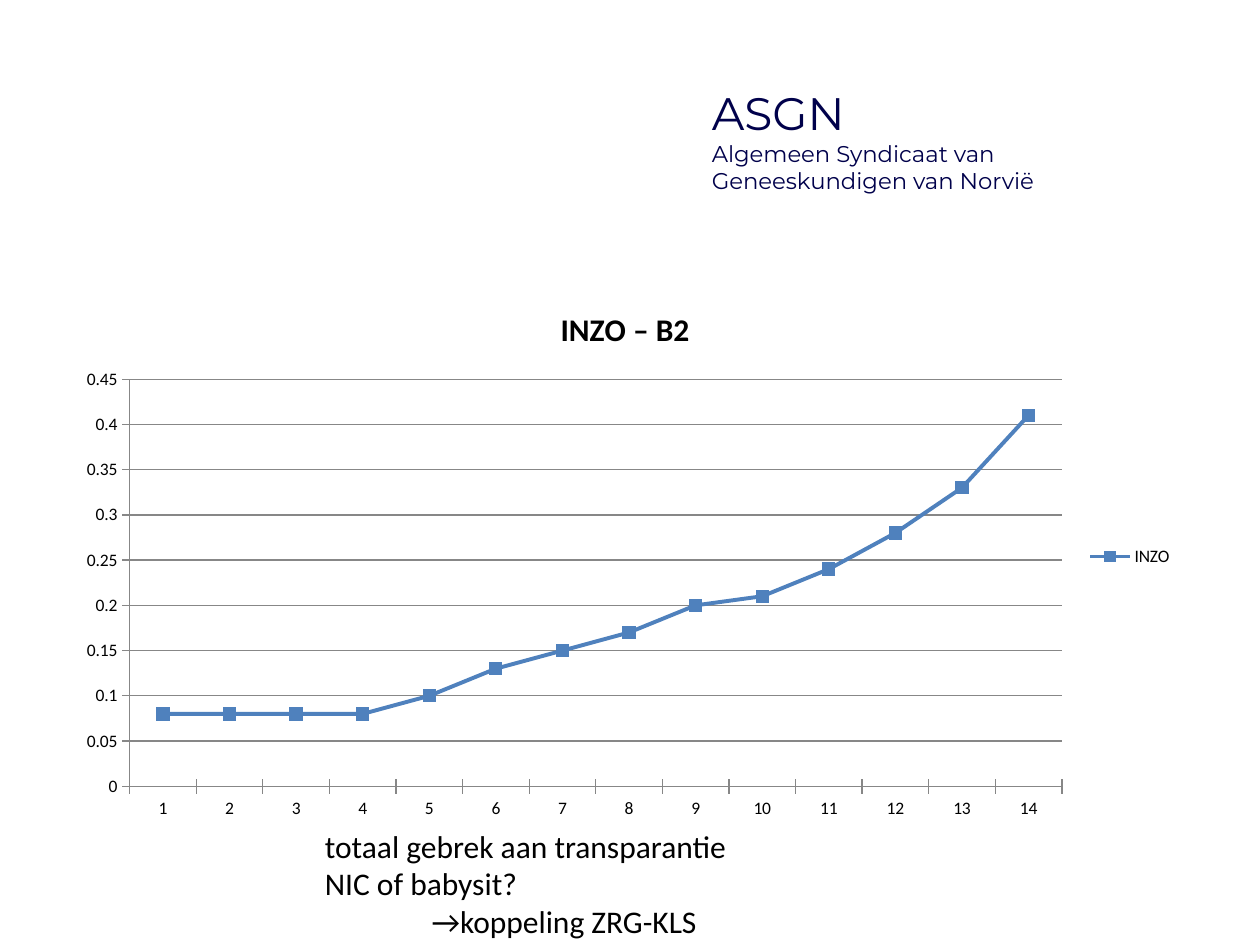
from pptx import Presentation
from pptx.chart.data import CategoryChartData
from pptx.dml.color import RGBColor
from pptx.enum.chart import XL_CHART_TYPE, XL_LEGEND_POSITION, XL_MARKER_STYLE, XL_TICK_MARK
from pptx.enum.text import MSO_ANCHOR
from pptx.util import Cm, Pt

LINE_CHART = XL_CHART_TYPE.LINE_MARKERS_STACKED
LEGEND_RIGHT = XL_LEGEND_POSITION.RIGHT
SQUARE = XL_MARKER_STYLE.SQUARE
CROSS = XL_TICK_MARK.CROSS
TOP = MSO_ANCHOR.TOP
MIDDLE = MSO_ANCHOR.MIDDLE

BLACK = RGBColor(0x00, 0x00, 0x00)
NAVY = RGBColor(0x00, 0x01, 0x4B)
BLUE = RGBColor(0x4F, 0x81, 0xBD)
GREY = RGBColor(0x87, 0x87, 0x87)

TITLE = {"name": "Calibri", "size": Pt(18), "bold": True}
LABEL = {"name": "Calibri", "size": Pt(10)}
REMARK = {"name": "Calibri", "size": Pt(18)}
ACRONYM = {"name": "Montserrat", "size": Pt(26)}
FULL_NAME = {"name": "Montserrat", "size": Pt(13)}

INZO_VALUES = [0.08, 0.08, 0.08, 0.08, 0.1, 0.13, 0.15,
               0.17, 0.2, 0.21, 0.24, 0.28, 0.33, 0.41]


def format_font(font, style, color):
    for name, value in style.items():
        setattr(font, name, value)
    font.color.rgb = color


def format_line(line, color, width):
    line.color.rgb = color
    line.width = Pt(width)


def add_text(page, bounds, lines, color, anchor=TOP):
    """Add a text box; each line is a (text, style, left indent) tuple."""
    box = page.shapes.add_textbox(*bounds)
    frame = box.text_frame
    frame.word_wrap = True
    frame.vertical_anchor = anchor
    for index, (text, style, indent) in enumerate(lines):
        para = frame.add_paragraph() if index else frame.paragraphs[0]
        if indent:
            para._p.get_or_add_pPr().set("marL", str(indent))
        span = para.add_run()
        span.text = text
        format_font(span.font, style, color)


def format_axes(chart):
    for axis in (chart.category_axis, chart.value_axis):
        axis.major_tick_mark = CROSS
        axis.minor_tick_mark = XL_TICK_MARK.NONE
        format_line(axis.format.line, GREY, 0.75)
        format_font(axis.tick_labels.font, LABEL, BLACK)
    scale = chart.value_axis
    scale.minimum_scale, scale.maximum_scale, scale.major_unit = 0, 0.45, 0.05
    scale.has_major_gridlines = True
    format_line(scale.major_gridlines.format.line, GREY, 0.75)


def add_line_chart(page, bounds, title, series_name, values):
    data = CategoryChartData()
    data.categories = [str(number) for number in range(1, len(values) + 1)]
    data.add_series(series_name, values)
    chart = page.shapes.add_chart(LINE_CHART, *bounds, data).chart
    format_font(chart.font, LABEL, BLACK)

    chart.has_title = True
    span = chart.chart_title.text_frame.paragraphs[0].add_run()
    span.text = title
    format_font(span.font, TITLE, BLACK)
    chart.chart_title.include_in_layout = False

    chart.has_legend = True
    chart.legend.position = LEGEND_RIGHT
    chart.legend.include_in_layout = False
    format_font(chart.legend.font, LABEL, BLACK)
    format_axes(chart)

    plot = chart.plots[0]
    plot.vary_by_categories = False
    series = plot.series[0]
    series.smooth = False
    format_line(series.format.line, BLUE, 2.25)
    series.marker.style = SQUARE
    series.marker.size = 7
    series.marker.format.fill.solid()
    series.marker.format.fill.fore_color.rgb = BLUE
    format_line(series.marker.format.line, BLUE, 0.75)


def main():
    deck = Presentation()
    deck.slide_width, deck.slide_height = Cm(25.4), Cm(19.05)
    page = deck.slides.add_slide(deck.slide_layouts[6])

    add_line_chart(page, (Cm(1.3), Cm(5.72), Cm(22.6), Cm(11)),
                   "INZO – B2", "INZO", INZO_VALUES)
    add_text(page, (Cm(6.3), Cm(16.54), Cm(8.69), Cm(2.57)), [
        ("totaal gebrek aan transparantie", REMARK, 0),
        ("NIC of babysit?", REMARK, 0),
        ("→koppeling ZRG-KLS", REMARK, Cm(2.15)),
    ], BLACK)
    add_text(page, (Cm(14.1), Cm(1.57), Cm(8.94), Cm(2.49)), [
        ("ASGN", ACRONYM, 0),
        ("Algemeen Syndicaat van", FULL_NAME, 0),
        ("Geneeskundigen van Norvië", FULL_NAME, 0),
    ], NAVY, MIDDLE)

    deck.save("out.pptx")


if __name__ == "__main__":
    main()
